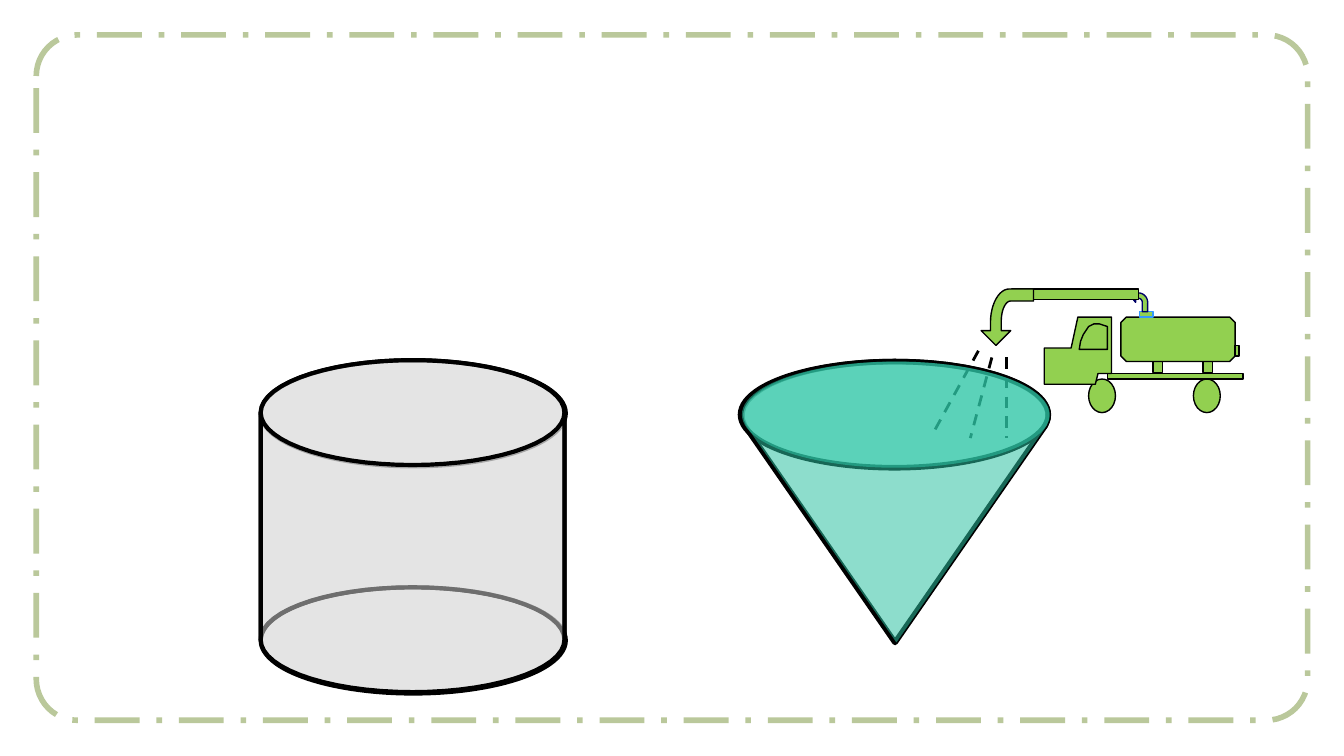
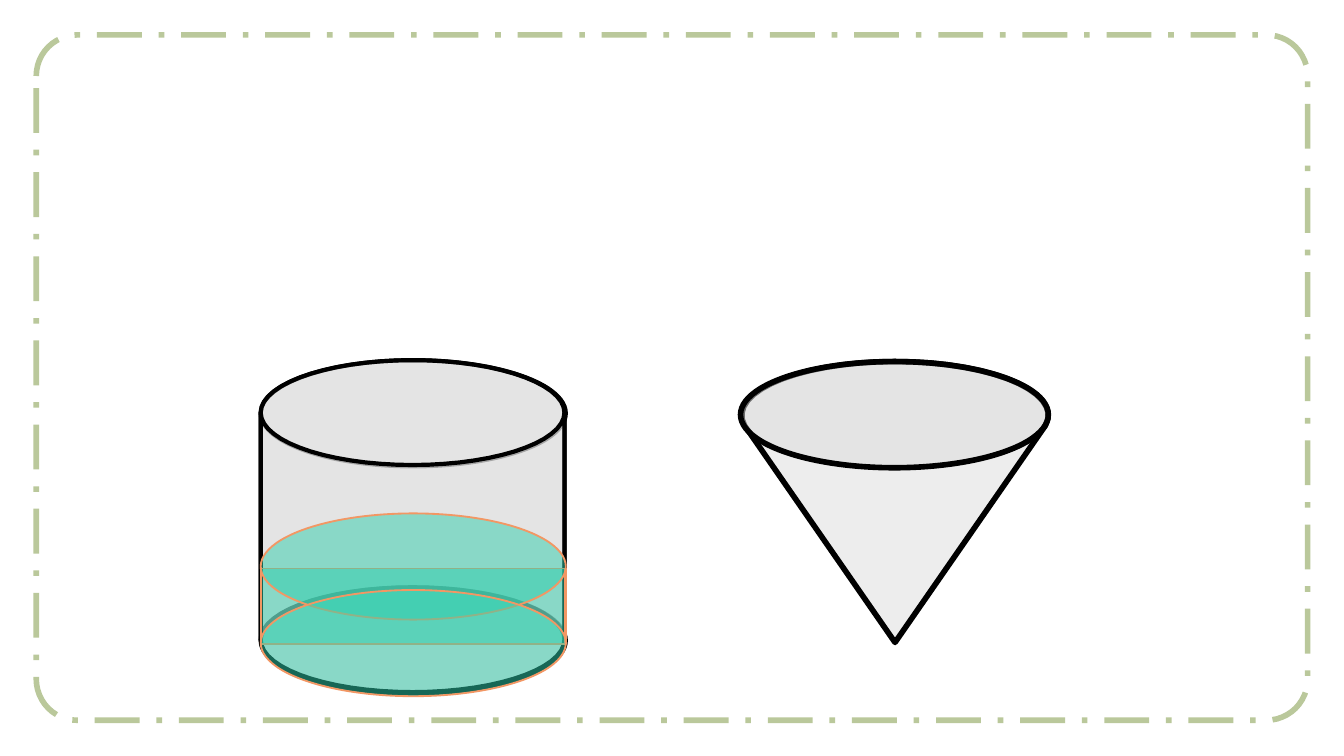
from math import cos, radians, sin

from lxml.etree import SubElement
from pptx import Presentation
from pptx.dml.color import RGBColor
from pptx.enum.dml import MSO_LINE_DASH_STYLE as Dash
from pptx.enum.shapes import MSO_CONNECTOR as Connector, MSO_SHAPE as Preset
from pptx.oxml.ns import qn
from pptx.util import Inches, Pt


def paint(shape, fill=None, alpha=100, line=None, width=1, dash=None):
    """Set fill, outline and opacity from hex colours, without a shadow."""
    if fill:
        shape.fill.solid()
        shape.fill.fore_color.rgb = RGBColor.from_string(fill)
        if alpha < 100:
            colour = shape.element.spPr.find(qn("a:solidFill"))[0]
            SubElement(colour, qn("a:alpha"), val=str(alpha * 1000))
    if line:
        shape.line.color.rgb = RGBColor.from_string(line)
        shape.line.width = Pt(width)
        if dash:
            shape.line.dash_style = dash
    else:
        shape.line.fill.background()
    SubElement(shape.element.spPr, qn("a:effectLst"))


def arc(x, y, radius_x, radius_y, start, end, steps=30):
    """Points on an ellipse around x, y; degrees run clockwise from the right."""
    angles = [radians(start + (end - start) * i / steps) for i in range(steps + 1)]
    return [(x + radius_x * cos(a), y + radius_y * sin(a)) for a in angles]


# Styles
BLACK = "000000"
green = dict(fill="92D050", line=BLACK, width=0.75)
glass = dict(fill="DDDDDD", alpha=50, line=BLACK, width=2.25)
thick_glass = dict(glass, width=3)
water = dict(fill="2FCEAC", alpha=50)
edged_water = dict(water, line="F29764", width=1)
dashed = dict(line=BLACK, width=1.5, dash=Dash.DASH)

# Tank truck: wheels, chassis, cab, tank, hose and spout
truck = [(Preset.OVAL, (x, 2.82, 0.2, 0.25), green) for x in (8.88, 8.1)]
truck += [
    (Preset.RECTANGLE, (8.24, 2.78, 1.01, 0.04), green),
    (Preset.RECTANGLE, (8.95, 2.69, 0.07, 0.08), green),
    (Preset.RECTANGLE, (8.58, 2.69, 0.07, 0.08), green),
    ("outline", [(8.27, 2.78), (8.27, 2.36), (8.02, 2.36), (7.97, 2.59),
                 (7.77, 2.59), (7.77, 2.86), (8.15, 2.86), (8.17, 2.78)], green),
    ("outline", [(8.24, 2.43), (8.18, 2.41), (8.14, 2.41), (8.1, 2.43),
                 (8.06, 2.49), (8.04, 2.54), (8.03, 2.6), (8.24, 2.6)], green),
    ("outline", [(9.19, 2.69), (8.38, 2.69), (8.34, 2.65), (8.34, 2.4),
                 (8.38, 2.36), (9.15, 2.36), (9.19, 2.4)], green),
    (Preset.RECTANGLE, (8.48, 2.32, 0.1, 0.04), dict(green, line="3399FF")),
    (Preset.RECTANGLE, (9.19, 2.57, 0.03, 0.08), green),
    ("outline", [(8.41, 2.2), (8.45, 2.15), (8.45, 2.18),
                 *arc(8.47, 2.25, 0.07, 0.07, -90, 0, 8), (8.54, 2.32), (8.5, 2.32),
                 *arc(8.47, 2.25, 0.03, 0.03, 0, -90, 8), (8.45, 2.22), (8.45, 2.25)],
     dict(green, line="000066")),
    (Preset.RECTANGLE, (7.53, 2.15, 0.94, 0.08), green),
    ("outline", [(7.41, 2.57), (7.3, 2.46), (7.37, 2.46),
                 *arc(7.51, 2.4, 0.14, 0.25, 180, 270, 12), (7.69, 2.15), (7.69, 2.24),
                 *arc(7.52, 2.39, 0.07, 0.15, 270, 180, 12), (7.45, 2.46), (7.52, 2.46)],
     green),
]
# The tank's lower right corner is bevelled like the other three
tank = truck[7][1]
tank[:1] = [(9.19, 2.65), (9.15, 2.69)]

# Cylinder: two rims, then the rear and front walls
middle, radius_x, radius_y = 3.07, 1.13, 0.39
top, bottom = 3.07, 4.76
cylinder = [(Preset.OVAL, (1.94, y, 2.27, 0.79), glass) for y in (4.37, 2.68)]
cylinder += [
    ("outline", arc(middle, top, radius_x, radius_y, 180, 360)
     + arc(middle, bottom, radius_x, radius_y, 360, 180), glass),
    ("outline", arc(middle, bottom, radius_x, radius_y, 180, 0)
     + arc(middle, top, radius_x, radius_y, 0, 180), glass),
]

# Cone and the water that fills it
cone_outline = [(6.66, 4.78)] + arc(6.66, 3.09, 1.14, 0.4, 11, -191)
cone = [("outline", cone_outline, thick_glass),
        (Preset.OVAL, (5.51, 2.69, 2.29, 0.79), thick_glass)]
cone_water = [("outline", [(x + 0.01, y) for x, y in cone_outline], water),
              (Preset.OVAL, (5.52, 2.69, 2.29, 0.79), water)]

# Stream from the spout
stream = [("line", ends, dashed) for ends in (
    (7.28, 2.61, 6.95, 3.21), (7.49, 2.66, 7.49, 3.26), (7.38, 2.66, 7.22, 3.26))]

# Water standing in the cylinder
cylinder_water = [(Preset.RECTANGLE, (1.94, 4.23, 2.27, 0.56), edged_water)]
cylinder_water += [("line", (x, y, x, y + 0.56), dict(line="F29764", width=1))
                   for x, y in ((1.94, 4.22), (4.2, 4.23))]
cylinder_water += [(Preset.OVAL, (1.94, y, 2.27, 0.79), edged_water)
                   for y in (3.82, 4.39)]

# Widescreen deck and blank layout
deck = Presentation()
deck.slide_width = Inches(10)
deck.slide_height = deck.slide_width * 9 // 16
layout = deck.slide_layouts[6]
for placeholder in list(layout.placeholders):
    layout.shapes.element.remove(placeholder.element)
pages = [deck.slides.add_slide(layout) for _ in range(2)]

# Dashed frame shared through the layout
frame = pages[0].shapes.add_shape(
    Preset.ROUNDED_RECTANGLE, *map(Inches, (0.27, 0.26, 9.46, 5.1)))
frame.adjustments[0] = 0.06
paint(frame, "FFFFFF", line="BAC89B", width=3, dash=Dash.LONG_DASH_DOT)
layout.shapes.element.append(frame.element)

# Draw every object as a group of its parts
scenes = [[truck, cylinder, cone, stream, cone_water],
          [cylinder, cone, cylinder_water]]
for page, scene in zip(pages, scenes):
    for parts in scene:
        group = page.shapes.add_group_shape()
        for kind, geometry, style in parts:
            if kind == "outline":
                points = [(Inches(x), Inches(y)) for x, y in geometry]
                builder = group.shapes.build_freeform(*points[0])
                builder.add_line_segments(points[1:], close=True)
                shape = builder.convert_to_shape()
            elif kind == "line":
                shape = group.shapes.add_connector(
                    Connector.STRAIGHT, *map(Inches, geometry))
            else:
                shape = group.shapes.add_shape(kind, *map(Inches, geometry))
            paint(shape, **style)

deck.save("out.pptx")
